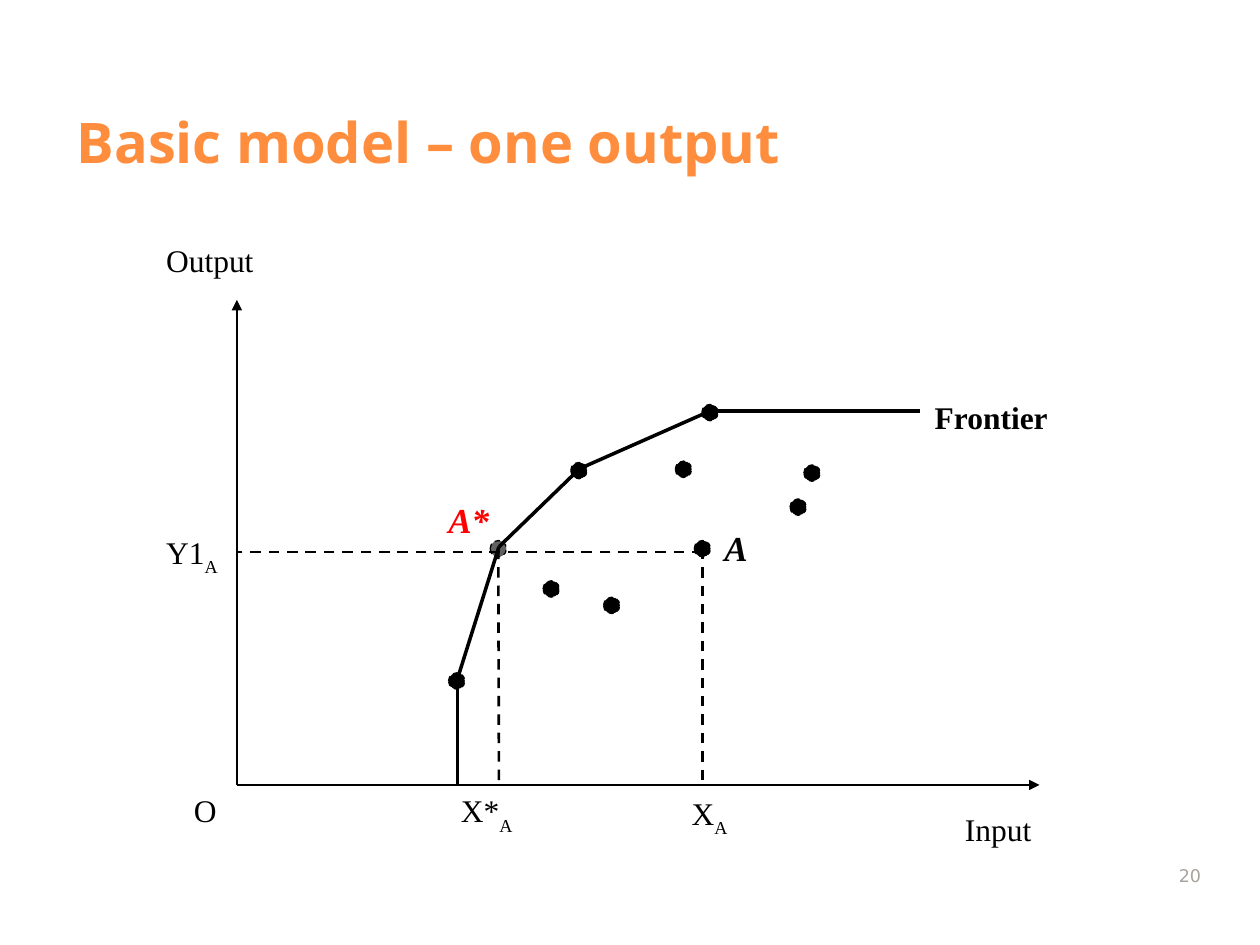
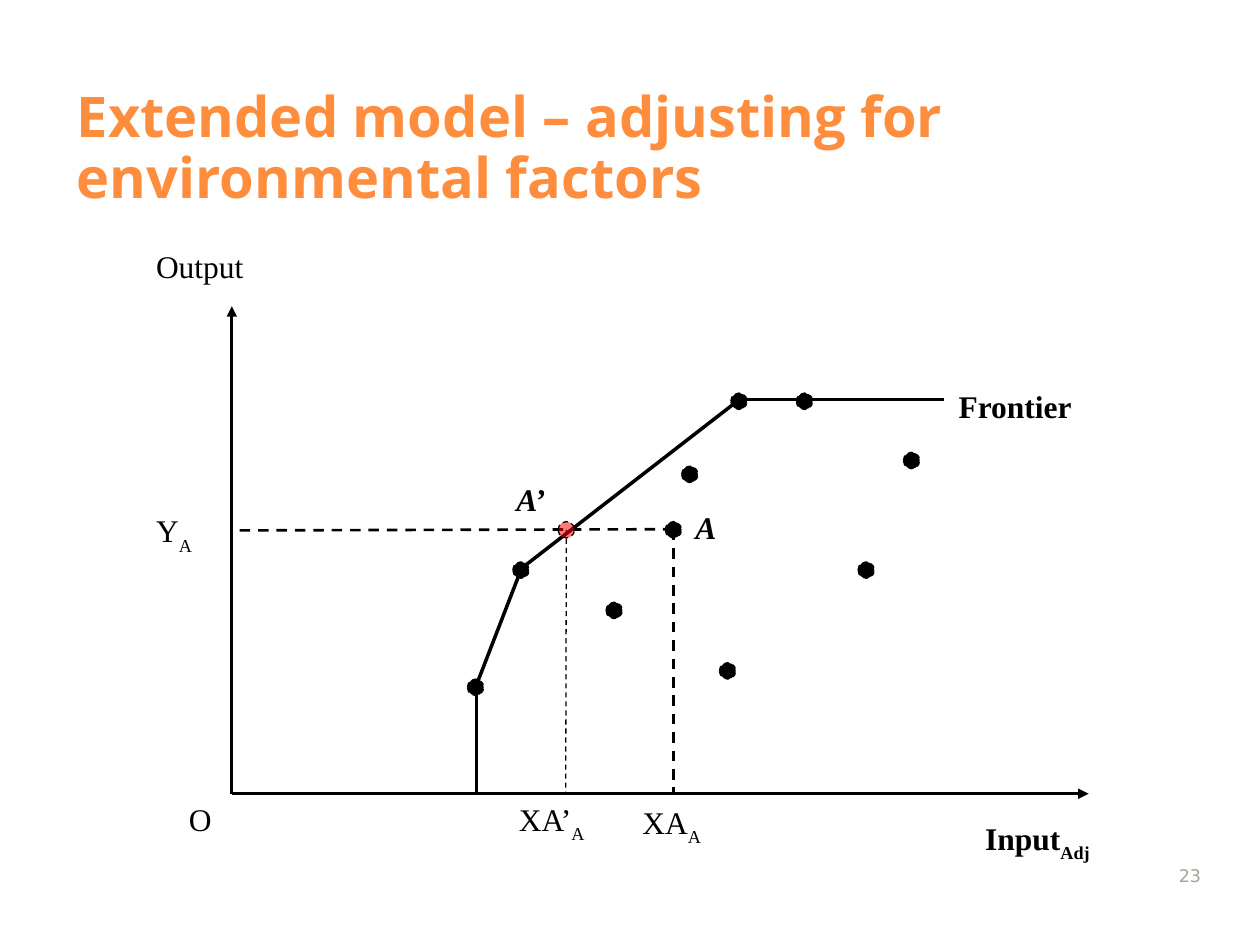
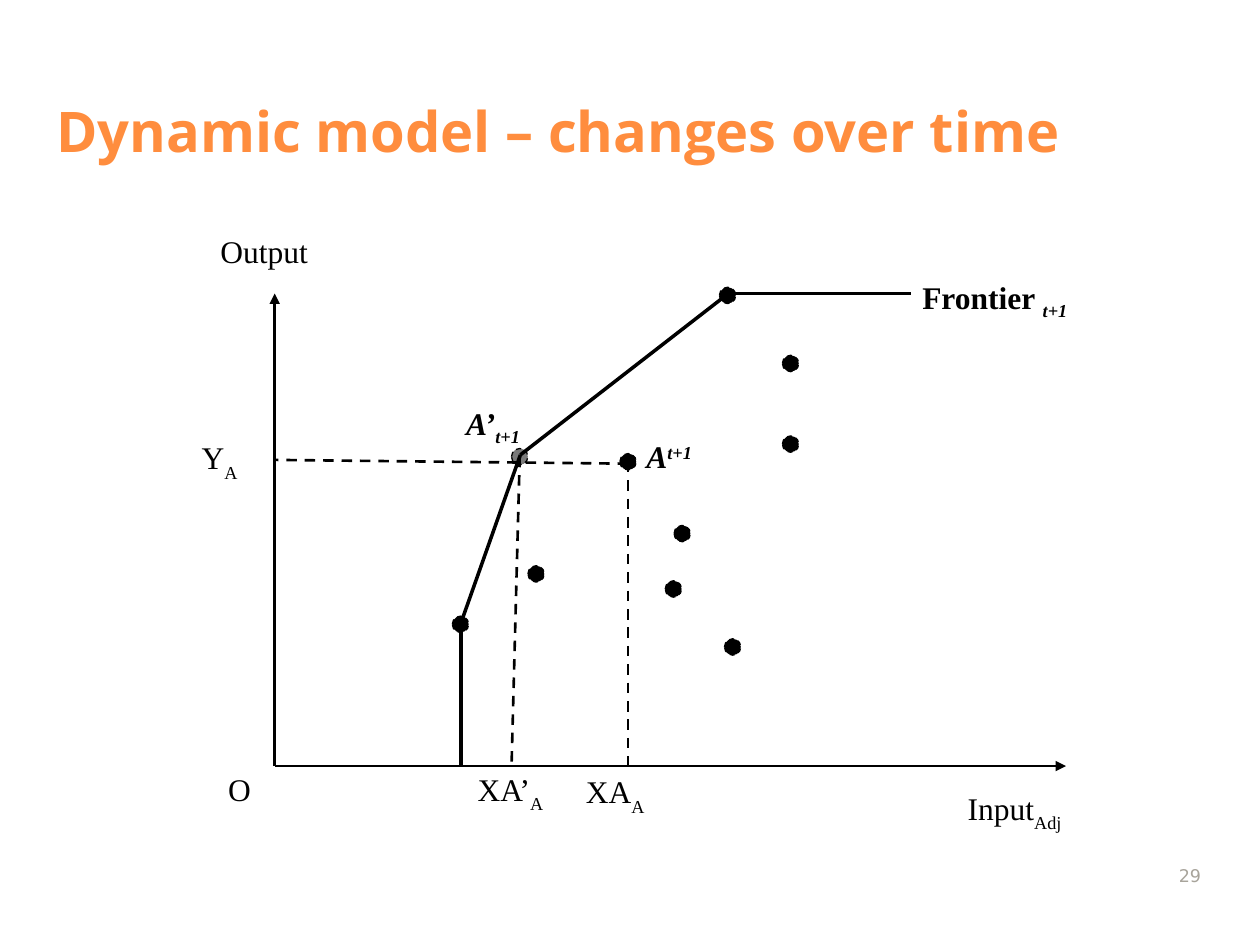
import pptx
import pptx.util
import pptx.dml.color
import pptx.oxml.ns
import pptx.enum.dml
import pptx.enum.shapes
import pptx.enum.text
import itertools
from lxml import etree

Inches = pptx.util.Inches
Pt = pptx.util.Pt
BLACK, RED, ORANGE, GREY = "000000", "FF0000", "FF8D3E", "A8A49B"
TITLE_FONT, LABEL_FONT, NUMBER_FONT = "Open Sans", "Times New Roman", "DejaVu Sans"
BOLD = dict(bold=True)
BOLD_ITALIC = dict(bold=True, italic=True)
STAR = dict(BOLD_ITALIC, size=20)
DOT = 0.13
LABEL_HEIGHT = 0.45
WIDTHS = dict(input=1.15, output=1.2, zero=0.56, frontier=1.4, unit=0.6,
              level=0.78, used=0.9, needed=0.88, target=0.64)

SLIDES = [
    dict(
        title="Basic model – one output", left=0.51, bottom=1.39,
        number="20", inset=(0.1, 0.05),
        origin=(1.88, 6.23), x_end=8.25, y_end=2.38, frontier_end=7.3,
        corners=[(3.56, 5.34), (3.89, 4.29), (4.53, 3.67), (5.57, 3.21)],
        inside=[(4.79, 4.74), (6.38, 3.69), (5.36, 3.66), (6.27, 3.96), (4.31, 4.61)],
        unit=(5.51, 4.29), target=(3.89, 4.29), target_fill=(BLACK, 62),
        level=(4.38, 4.38), foot=3.96, foot_width=1.5,
        lefts=dict(input=7.56, output=1.22, level=1.22, used=5.39, needed=3.56),
        labels=dict(input=("Input", "", {}), frontier=("Frontier", "", BOLD),
                    unit=("A", "", STAR), target=("A*", "", dict(STAR, color=RED)),
                    level=("Y1", "A", {}), used=("X", "A", {}), needed=("X*", "A", {})),
    ),
    dict(
        title="Extended model – adjusting for environmental factors", left=0.51,
        bottom=1.67, number="23", inset=(0.1, 0.05),
        origin=(1.84, 6.3), x_end=8.64, y_end=2.43, frontier_end=7.49,
        corners=[(3.71, 5.39), (4.07, 4.46), (5.8, 3.12)],
        inside=[(5.41, 3.7), (7.17, 3.59), (5.71, 5.26), (6.32, 3.12), (6.81, 4.46),
                (4.81, 4.78)],
        unit=(5.28, 4.14), target=(4.43, 4.14), target_fill=(RED, 52),
        level=(4.2, 4.21), foot=4.49, foot_width=0.75,
        lefts=dict(input=7.72, output=1.14, level=1.14, used=5, needed=4.02),
        labels=dict(input=("Input", "Adj", BOLD), frontier=("Frontier", "", BOLD),
                    unit=("A", "", BOLD_ITALIC), target=("A’", "", BOLD_ITALIC),
                    level=("Y", "A", {}), used=("XA", "A", {}), needed=("XA’", "A", {})),
    ),
    dict(
        title="Dynamic model – changes over time", left=0.35, bottom=1.31,
        number="29", inset=(0.07, 0.03),
        origin=(2.18, 6.08), x_end=8.46, y_end=2.33, frontier_end=7.23,
        corners=[(3.59, 4.89), (4.06, 3.56), (5.71, 2.28)],
        inside=[(4.19, 4.49), (6.21, 3.46), (5.75, 5.07), (6.21, 2.82), (5.35, 4.17),
                (5.28, 4.61)],
        unit=(4.92, 3.6), target=(4.06, 3.56), target_fill=(BLACK, 52),
        level=(3.68, 3.65), foot=4.06, foot_width=1.5,
        lefts=dict(input=7.61, output=1.68, level=1.53, used=4.58, needed=3.72),
        labels=dict(input=("Input", "Adj", {}),
                    frontier=("Frontier ", "t+1", dict(BOLD, small_italic=True, shift=-25)),
                    unit=("A", "t+1", dict(BOLD_ITALIC, shift=30)),
                    target=("A’", "t+1", dict(BOLD_ITALIC, shift=-25)),
                    level=("Y", "A", {}), used=("XA", "A", {}), needed=("XA’", "A", {})),
    ),
]


def rgb(color):
    return pptx.dml.color.RGBColor.from_string(color)


def add_text(s, box, text, small="", size=18, font=LABEL_FONT, color=BLACK, bold=False,
             italic=False, small_italic=False, shift=-30, inset=(0.1, 0.05), bottom=None,
             anchor="TOP", align="LEFT", spacing=None):
    tf = s.shapes.add_textbox(*map(Inches, box)).text_frame
    tf.word_wrap = True
    tf.margin_left = tf.margin_right = Inches(inset[0])
    tf.margin_top = Inches(inset[1])
    tf.margin_bottom = Inches(inset[1] if bottom is None else bottom)
    tf.vertical_anchor = getattr(pptx.enum.text.MSO_ANCHOR, anchor)
    p = tf.paragraphs[0]
    p.alignment = getattr(pptx.enum.text.PP_ALIGN, align)
    if spacing:
        p.line_spacing = spacing
    for part, base in ((text, 0), (small, shift)):
        if not part:
            continue
        r = p.add_run()
        r.text = part
        r.font.size, r.font.name = Pt(size), font
        r.font.bold = bold
        r.font.italic = italic or (base != 0 and small_italic)
        r.font.color.rgb = rgb(color)
        if base:
            r._r.get_or_add_rPr().set("baseline", str(base * 1000))


def add_line(s, start, end, width, dashed=False, arrow=False):
    line = s.shapes.add_connector(pptx.enum.shapes.MSO_CONNECTOR.STRAIGHT,
                                  *map(Inches, start + end))
    line.line.color.rgb = rgb(BLACK)
    line.line.width = Pt(width)
    if dashed:
        line.line.dash_style = pptx.enum.dml.MSO_LINE.DASH
    if arrow:
        etree.SubElement(line.line._get_or_add_ln(), pptx.oxml.ns.qn("a:tailEnd"),
                         type="triangle")
    etree.SubElement(line._element.spPr, pptx.oxml.ns.qn("a:effectLst"))


def add_dot(s, place, color=BLACK, opacity=100):
    sp = s.shapes.add_shape(pptx.enum.shapes.MSO_SHAPE.OVAL,
                            *map(Inches, place + (DOT, DOT)))
    sp.shadow.inherit = False
    sp.fill.solid()
    sp.fill.fore_color.rgb = rgb(color)
    sp.line.color.rgb = rgb(BLACK)
    sp.line.width = Pt(0.75)
    sp.line.dash_style = pptx.enum.dml.MSO_LINE.DASH
    if opacity < 100:
        fill = sp._element.spPr.find(pptx.oxml.ns.qn("a:solidFill"))
        etree.SubElement(fill[0], pptx.oxml.ns.qn("a:alpha"), val=str(opacity * 1000))


def centre(place):
    return place[0] + DOT / 2, place[1] + DOT / 2


def add_lines(s, model):
    x0, y0 = model["origin"]
    for end in ((model["x_end"], y0), (x0, model["y_end"])):
        add_line(s, (x0, y0), end, 1.5, arrow=True)
    bends = [(x + 0.07, y + 0.05) for x, y in model["corners"]]
    frontier = [(bends[0][0], y0)] + bends + [(model["frontier_end"], bends[-1][1])]
    for start, end in itertools.pairwise(frontier):
        add_line(s, start, end, 2)
    unit_x, unit_y = centre(model["unit"])
    start_y, axis_y = model["level"]
    add_line(s, (unit_x, unit_y), (unit_x, y0), 1.5, dashed=True)
    add_line(s, (unit_x, start_y), (x0, axis_y), 1.5, dashed=True)
    add_line(s, centre(model["target"]), (model["foot"], y0), model["foot_width"],
             dashed=True)
    return frontier[-1]


def add_labels(s, model, frontier_end):
    x0, y0 = model["origin"]
    lefts = model["lefts"]
    unit, target = model["unit"], model["target"]
    places = dict(
        input=(lefts["input"], y0 + 0.15),
        output=(lefts["output"], model["y_end"] - 0.52),
        zero=(x0 - 0.44, y0),
        frontier=(frontier_end[0] + 0.02, frontier_end[1] - 0.15),
        unit=(unit[0] + 0.14, unit[1] - 0.16),
        level=(lefts["level"], model["level"][1] - 0.2),
        used=(lefts["used"], y0 + 0.02),
        needed=(lefts["needed"], y0),
        target=(target[0] - 0.43, target[1] - 0.38),
    )
    labels = dict(model["labels"], output=("Output", "", {}), zero=("O", "", {}))
    for role, (text, small, style) in labels.items():
        width = WIDTHS[role]
        add_text(s, places[role] + (width, LABEL_HEIGHT), text, small,
                 inset=model["inset"], **style)


def add_model(prs, model):
    s = prs.slides.add_slide(prs.slide_layouts[6])
    left, top = model["left"], 0.52
    add_text(s, (left, top, 10 - 2 * left, model["bottom"] - top), model["title"],
             size=32, font=TITLE_FONT, color=ORANGE, bold=True, anchor="BOTTOM",
             bottom=0, spacing=0.9)
    frontier_end = add_lines(s, model)
    for place in model["corners"] + model["inside"] + [model["unit"]]:
        if place != model["target"]:
            add_dot(s, place)
    add_dot(s, model["target"], *model["target_fill"])
    add_labels(s, model, frontier_end)
    add_text(s, (9.13, 6.68, 0.5, 0.4), model["number"], size=10, font=NUMBER_FONT,
             color=GREY, anchor="BOTTOM", align="RIGHT")


def main():
    prs = pptx.Presentation()
    prs.slide_width, prs.slide_height = Inches(10), Inches(7.5)
    for model in SLIDES:
        add_model(prs, model)
    prs.save("out.pptx")


if __name__ == "__main__":
    main()
